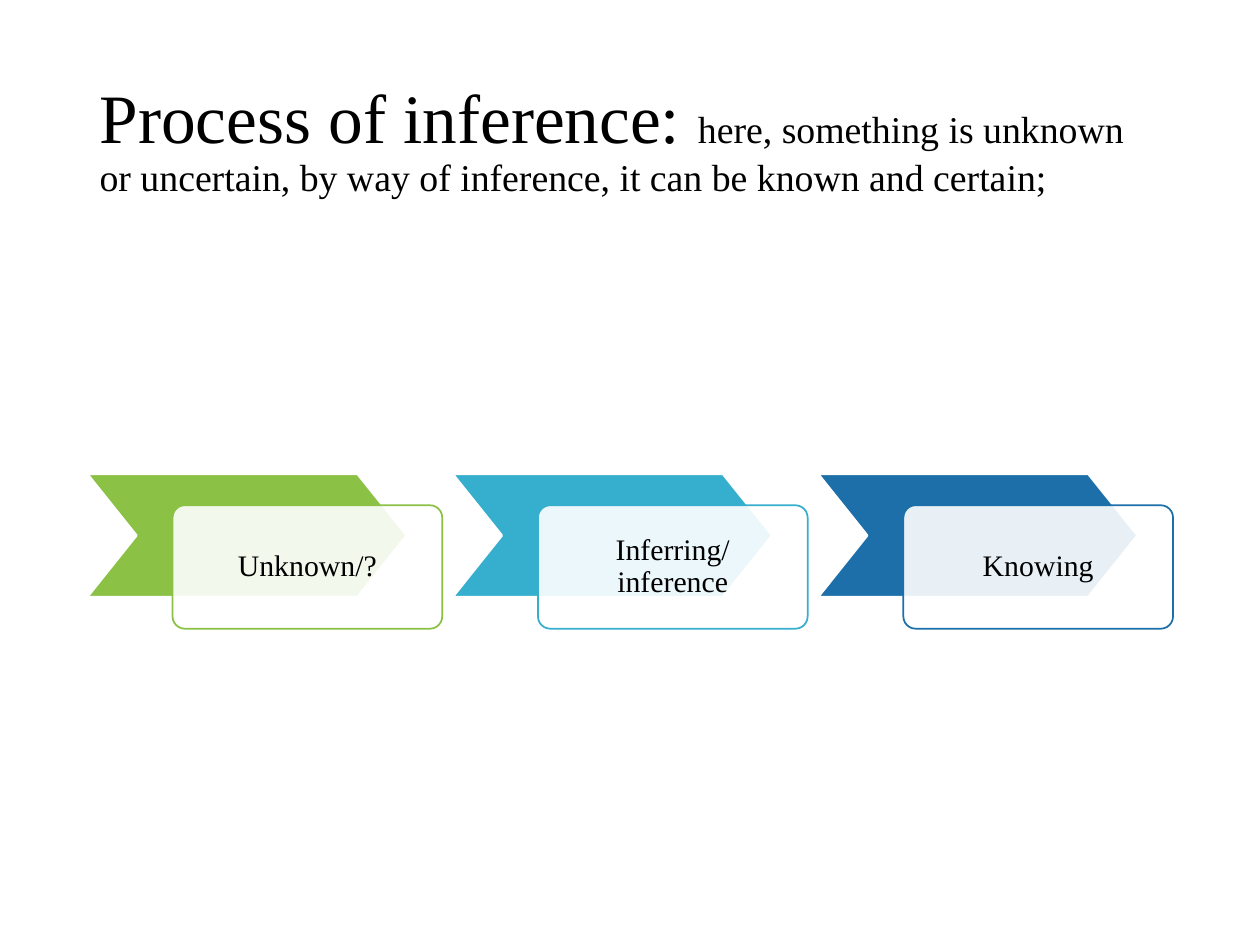
from lxml import etree
from pptx import Presentation
from pptx.dml.color import RGBColor
from pptx.enum.shapes import MSO_SHAPE
from pptx.enum.text import MSO_ANCHOR, MSO_AUTO_SIZE, PP_ALIGN
from pptx.oxml.ns import qn
from pptx.util import Inches, Pt

FONT = "Times New Roman"
BLACK = RGBColor(0x00, 0x00, 0x00)
WHITE = RGBColor(0xFF, 0xFF, 0xFF)
GREEN = RGBColor(0x8B, 0xC1, 0x45)
CYAN = RGBColor(0x36, 0xAF, 0xCE)
BLUE = RGBColor(0x1D, 0x6F, 0xA9)

STEPS = [("Unknown/?", GREEN), ("Inferring/inference", CYAN), ("Knowing", BLUE)]

# Step grid, in inches
MARGIN = 0.69
COLUMN_PITCH = 2.9
CHEVRON_TOP, CHEVRON_WIDTH, STEP_HEIGHT = 3.76, 2.54, 0.98
CARD_OFFSET_X, CARD_OFFSET_Y, CARD_WIDTH = 0.68, 0.25, 2.14
LABEL_INSET = 0.13 + 0.03


def add_run(paragraph, text, size):
    run = paragraph.add_run()
    run.text = text
    run.font.name = FONT
    run.font.size = Pt(size)
    run.font.color.rgb = BLACK


def add_step_shape(kind, left, top, width, adjustment, fill, line, line_width):
    shape = slide.shapes.add_shape(
        kind, Inches(left), Inches(top), Inches(width), Inches(STEP_HEIGHT))
    shape.shadow.inherit = False
    shape.adjustments[0] = adjustment
    shape.fill.solid()
    shape.fill.fore_color.rgb = fill
    shape.line.color.rgb = line
    shape.line.width = Pt(line_width)
    return shape


presentation = Presentation()
presentation.slide_width = Inches(10)
presentation.slide_height = Inches(7.5)
slide = presentation.slides.add_slide(presentation.slide_layouts[5])

title = slide.shapes.title
title.left, title.top = Inches(MARGIN), Inches(0.4)
title.width, title.height = Inches(10 - 2 * MARGIN), Inches(1.45)
title.text_frame.word_wrap = True
title.text_frame.auto_size = MSO_AUTO_SIZE.NONE
title.text_frame.vertical_anchor = MSO_ANCHOR.MIDDLE
paragraph = title.text_frame.paragraphs[0]
paragraph.alignment = PP_ALIGN.LEFT
paragraph.line_spacing = 0.9
add_run(paragraph, "Process of inference: ", 39.6)
add_run(paragraph, "here, something is unknown or uncertain, by way of inference, "
        "it can be known and certain;", 21.6)

for column, (label, color) in enumerate(STEPS):
    left = MARGIN + column * COLUMN_PITCH
    add_step_shape(MSO_SHAPE.CHEVRON, left, CHEVRON_TOP, CHEVRON_WIDTH,
                   0.4, color, WHITE, 1.5)
    card = add_step_shape(MSO_SHAPE.ROUNDED_RECTANGLE, left + CARD_OFFSET_X,
                          CHEVRON_TOP + CARD_OFFSET_Y, CARD_WIDTH,
                          0.1, WHITE, color, 1)
    card_color = card.fill._xPr.find(qn("a:solidFill")).find(qn("a:srgbClr"))
    etree.SubElement(card_color, qn("a:alpha")).set("val", "90000")

    frame = card.text_frame
    frame.word_wrap = True
    frame.vertical_anchor = MSO_ANCHOR.MIDDLE
    frame.margin_left = frame.margin_right = Inches(LABEL_INSET)
    frame.margin_top = frame.margin_bottom = Inches(LABEL_INSET)
    paragraph = frame.paragraphs[0]
    paragraph.alignment = PP_ALIGN.CENTER
    paragraph.line_spacing = 0.9
    add_run(paragraph, label, 17)

presentation.save("out.pptx")
